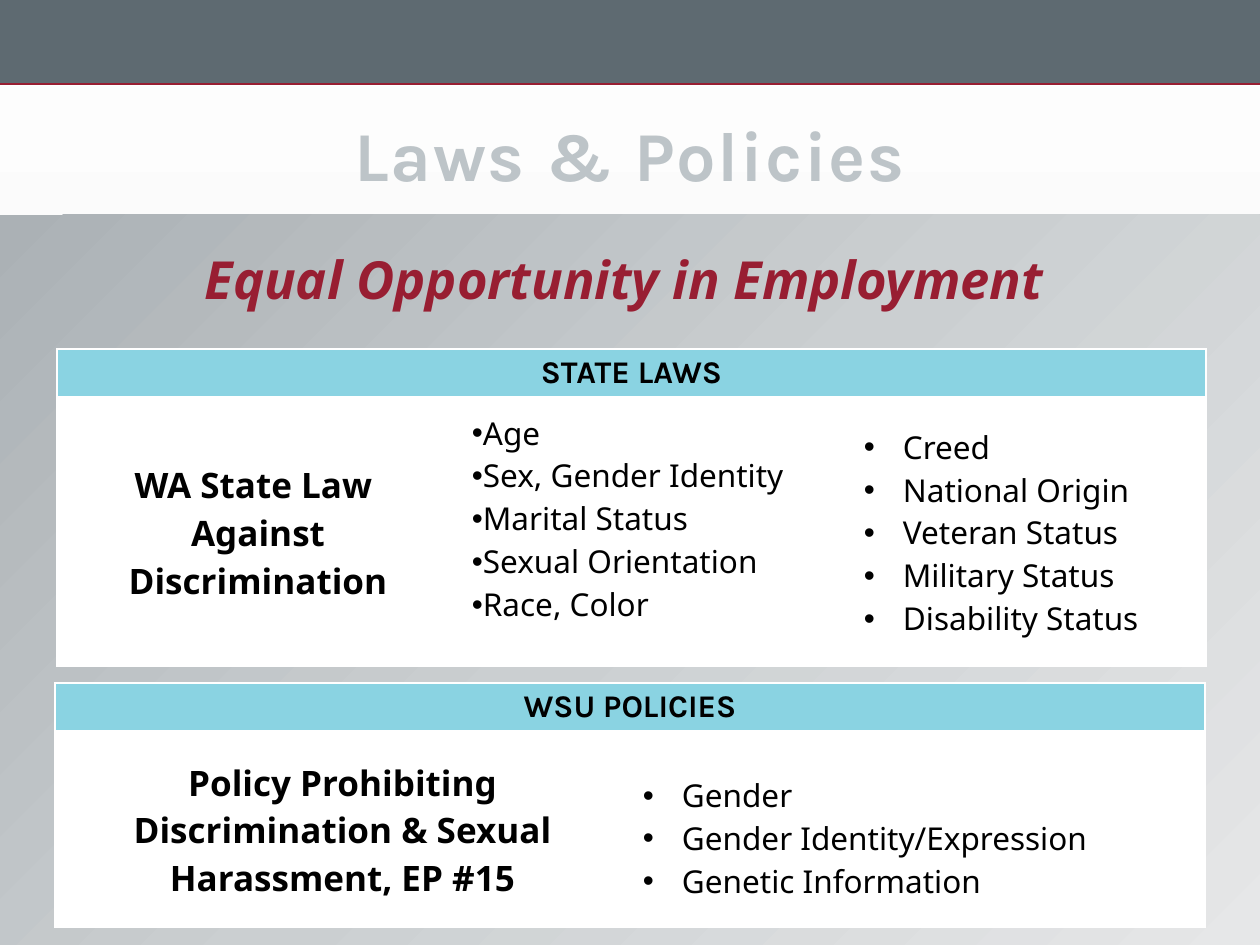
from copy import deepcopy
from dataclasses import dataclass

from lxml import etree
from pptx import Presentation
from pptx.dml.color import RGBColor
from pptx.enum import shapes, text
from pptx.oxml import ns
from pptx.util import Pt

EMU_PER_PX = 914400 / 126


@dataclass(frozen=True)
class Theme:
    slate: str = "5E6A71"
    crimson: str = "981E32"
    silver: str = "BDC4C8"
    aqua: str = "8AD3E2"
    white: str = "FFFFFF"
    black: str = "000000"
    page: tuple = ((0, "EAEAEA"), (100, "FFFFFF"))
    panel: tuple = ((0, "ABB1B5"), (50, "CBCFD1"), (100, "E6E7E8"))
    heading: str = "Karla"
    body: str = "Noto Sans"


THEME = Theme()
STYLES = {
    "title": dict(name=THEME.heading, size=Pt(40), bold=True, color=THEME.silver),
    "subtitle": dict(name=THEME.body, size=Pt(30), bold=True, italic=True, color=THEME.crimson),
    "header": dict(name=THEME.heading, size=Pt(18), bold=True, color=THEME.black),
    "label": dict(name=THEME.body, size=Pt(20), bold=True, color=THEME.black),
    "item": dict(name=THEME.body, size=Pt(18), bold=False, color=THEME.black),
}
CENTER = text.PP_ALIGN.CENTER
LEFT = text.PP_ALIGN.LEFT
TOP = text.MSO_ANCHOR.TOP
MIDDLE = text.MSO_ANCHOR.MIDDLE
BOTTOM = text.MSO_ANCHOR.BOTTOM


def px(value):
    return round(value * EMU_PER_PX)


def set_values(target, values):
    for name, value in values.items():
        setattr(target, name, value)


def add_element(parent, tag, **attributes):
    return etree.SubElement(parent, ns.qn(tag), attributes)


def paint(fill, color):
    fill.solid()
    fill.fore_color.rgb = RGBColor.from_string(color)


def paint_gradient(fill, element, stops, angle):
    fill.gradient()
    fill.gradient_angle = angle
    stop_list = element.find(".//" + ns.qn("a:gsLst"))
    while len(stop_list) < len(stops):
        stop_list.append(deepcopy(stop_list[0]))
    for stop, (position, color) in zip(fill.gradient_stops, stops):
        stop.position = position / 100
        stop.color.rgb = RGBColor.from_string(color)
    for stop in stop_list:
        for modifier in list(stop[0]):
            stop[0].remove(modifier)


def write_paragraphs(frame, lines, style, alignment, indent=None):
    for index, line in enumerate(lines):
        paragraph = frame.paragraphs[0] if index == 0 else frame.add_paragraph()
        paragraph.alignment = alignment
        if indent is not None:
            properties = paragraph._p.get_or_add_pPr()
            properties.set("marL", str(px(indent)))
            properties.set("indent", str(-px(39)))
            add_element(properties, "a:buFont", typeface="Arial")
            add_element(properties, "a:buChar", char="•")
        run = paragraph.add_run()
        run.text = line
        values = dict(STYLES[style])
        run.font.color.rgb = RGBColor.from_string(values.pop("color"))
        set_values(run.font, values)


def add_band(slide, left, top, width, height):
    band = slide.shapes.add_shape(
        shapes.MSO_SHAPE.RECTANGLE, px(left), px(top), px(width), px(height))
    band.shadow.inherit = False
    band.line.fill.background()
    return band


def add_backdrop(slide, width, height):
    paint_gradient(slide.background.fill, slide._element, THEME.page, 90)
    paint(add_band(slide, 0, 0, width, 84).fill, THEME.slate)
    rule = slide.shapes.add_connector(
        shapes.MSO_CONNECTOR.STRAIGHT, px(-2), px(84), px(width), px(84))
    rule.line.width = Pt(1)
    rule.line.color.rgb = RGBColor.from_string(THEME.crimson)
    add_element(rule._element.spPr, "a:effectLst")
    panel = add_band(slide, 0, 215, width, height - 215)
    paint_gradient(panel.fill, panel._element, THEME.panel, 315)


def add_title(slide, left, top, width, height):
    title = slide.shapes.title
    set_values(title, dict(left=px(left), top=px(top), width=px(width), height=px(height)))
    frame = title.text_frame
    set_values(frame, dict(
        vertical_anchor=BOTTOM, word_wrap=True, auto_size=text.MSO_AUTO_SIZE.SHAPE_TO_FIT_TEXT,
        margin_left=px(63), margin_right=px(63), margin_top=px(6), margin_bottom=px(6)))
    write_paragraphs(frame, ["Laws & Policies"], "title", CENTER)
    properties = frame.paragraphs[0].runs[0]._r.get_or_add_rPr()
    properties.set("spc", "100")
    outline = etree.Element(ns.qn("a:ln"), w=str(Pt(1.75)))
    add_element(add_element(outline, "a:solidFill"), "a:srgbClr", val=THEME.slate)
    properties.insert(0, outline)


def add_subtitle(slide, left, top, width, height):
    box = slide.shapes.add_textbox(px(left), px(top), px(width), px(height))
    set_values(box.text_frame, dict(
        word_wrap=True, auto_size=text.MSO_AUTO_SIZE.SHAPE_TO_FIT_TEXT))
    write_paragraphs(box.text_frame, ["Equal Opportunity in Employment "], "subtitle", CENTER)


def format_cell(cell, color, bottom_width=1):
    properties = cell._tc.get_or_add_tcPr()
    for side in "LRTB":
        width = bottom_width if side == "B" else 1
        border = add_element(properties, f"a:ln{side}", w=str(Pt(width)))
        add_element(add_element(border, "a:solidFill"), "a:srgbClr", val=THEME.white)
    paint(cell.fill, color)
    set_values(cell, dict(
        margin_left=px(13), margin_right=px(13), margin_top=px(6), margin_bottom=px(6)))


def add_category_table(slide, left, top, column_widths, row_heights, heading, columns):
    table = slide.shapes.add_table(
        2, len(columns), px(left), px(top), px(sum(column_widths)), px(sum(row_heights))).table
    set_values(table, dict(first_row=False, horz_banding=False))
    for column, width in zip(table.columns, column_widths):
        column.width = px(width)
    for row, height in zip(table.rows, row_heights):
        row.height = px(height)
    header = table.cell(0, 0)
    header.merge(table.cell(0, len(columns) - 1))
    for index, content in enumerate(columns):
        format_cell(table.cell(0, index), THEME.aqua, 3)
        cell = table.cell(1, index)
        format_cell(cell, THEME.white)
        set_values(cell, content["layout"])
        write_paragraphs(cell.text_frame, **content["text"])
    write_paragraphs(header.text_frame, [heading], "header", CENTER)


def label(lines):
    return dict(layout=dict(vertical_anchor=MIDDLE),
                text=dict(lines=lines, style="label", alignment=CENTER))


def bullets(lines, indent=39, **layout):
    return dict(layout=layout,
                text=dict(lines=lines, style="item", alignment=LEFT, indent=indent))


def main():
    presentation = Presentation()
    set_values(presentation, dict(slide_width=px(1260), slide_height=px(945)))
    slide = presentation.slides.add_slide(presentation.slide_layouts[0])
    subtitle = slide.placeholders[1]._element
    subtitle.getparent().remove(subtitle)
    add_backdrop(slide, 1260, 945)
    add_title(slide, 34, 105, 1192, 97)
    add_subtitle(slide, -258, 241, 1778, 77)
    add_category_table(slide, 57, 349, (402, 392, 355), (48, 268), "STATE LAWS", [
        label(["WA State Law ", "Against Discrimination"]),
        bullets(["Age", "Sex, Gender Identity", "Marital Status", "Sexual Orientation",
                 "Race, Color"], indent=0, vertical_anchor=BOTTOM, margin_bottom=px(41)),
        bullets(["Creed", "National Origin", "Veteran Status", "Military Status",
                 "Disability Status"], vertical_anchor=MIDDLE),
    ])
    add_category_table(slide, 55, 683, (575, 575), (48, 195), "WSU POLICIES", [
        label(["Policy Prohibiting Discrimination & Sexual Harassment, EP #15"]),
        bullets(["Gender", "Gender Identity/Expression", "Genetic Information"],
                vertical_anchor=TOP, margin_top=px(41)),
    ])
    presentation.save("out.pptx")


if __name__ == "__main__":
    main()
